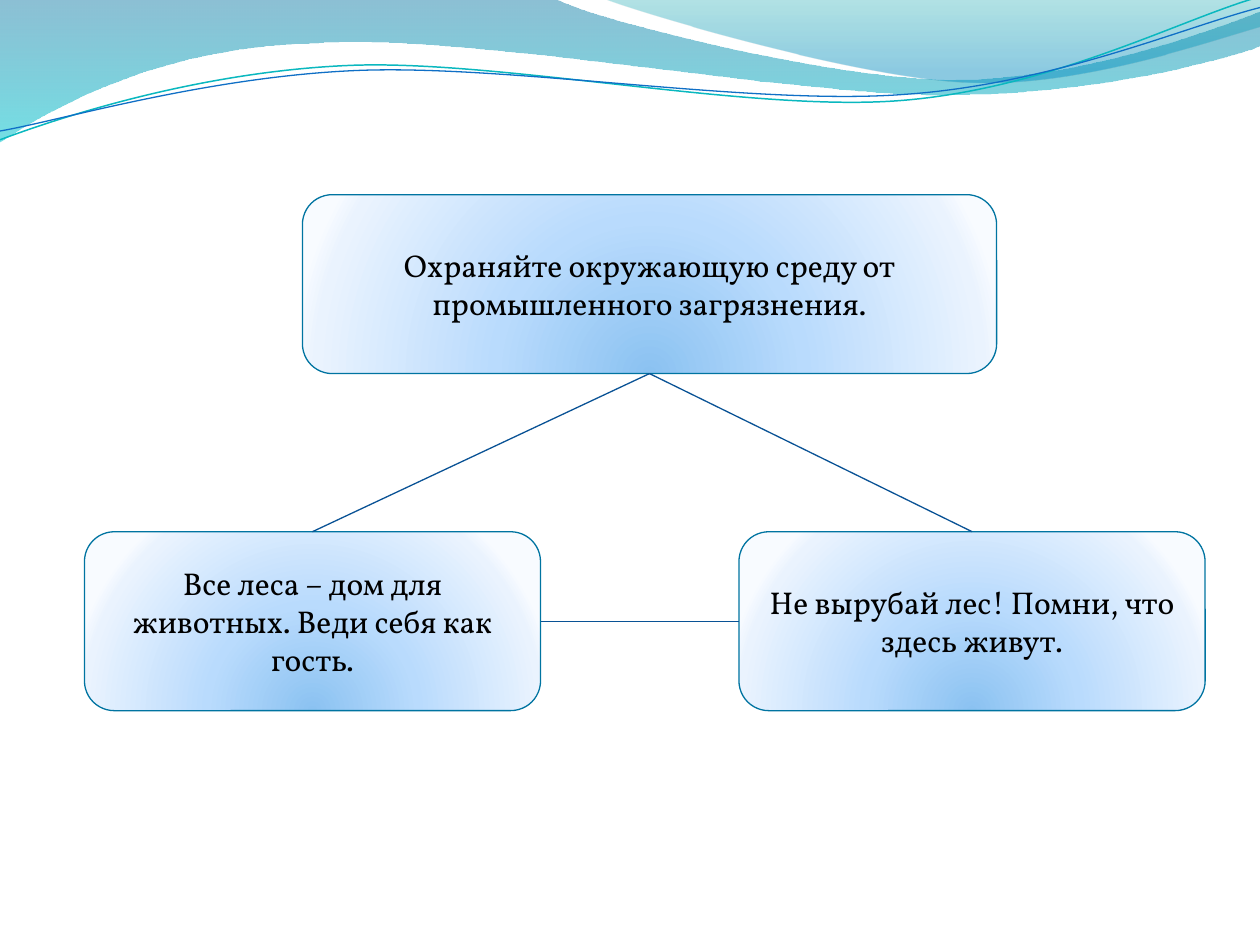
from pptx import Presentation as Deck
from pptx.dml.color import RGBColor as Rgb
from pptx.enum.shapes import MSO_CONNECTOR as Link, MSO_SHAPE as Kind
from pptx.enum.text import MSO_ANCHOR as Anchor, PP_ALIGN as Align
from pptx.oxml import parse_xml as parse
from pptx.oxml.ns import nsdecls as decl, qn
from pptx.util import Inches, Pt

# Gradient stops: position %, colour, opacity % where not solid
theme = {
    "sea": [(0, "0074A1", 45), (100, "00C6CF", 55)],
    "sky": [(0, "00A1A9", 30), (80, "008BBF", 45)],
    "box": [(0, "8BC2F1"), (43, "B9DBFD"), (93, "EAF3FE"), (100, "F8FBFF")],
    "edge": "0074A1", "link": "095295", "teal": "0AB8BF", "blue": "0F6FC6",
    "ink": "000000", "font": {"name": "Vollkorn", "size": Pt(18)},
}
down = '<a:lin ang="5400000" scaled="0"/>'
glow = ('<a:path path="circle">'
        '<a:fillToRect l="50000" t="130000" r="50000" b="-30000"/></a:path>')

deck = Deck()
deck.slide_width, deck.slide_height = Inches(10), Inches(7.5)
cell = deck.slide_width / 100  # grid of 100 columns by 75 rows
slide = deck.slides.add_slide(deck.slide_layouts[6])
shapes = slide.shapes


def shade(shape, stops, way):
    """Give a shape a gradient fill."""
    marks = ""
    for pos, tint, *clear in stops:
        alpha = "".join(f'<a:alpha val="{n * 1000}"/>' for n in clear)
        marks += (f'<a:gs pos="{pos * 1000}"><a:srgbClr val="{tint}">'
                  f'{alpha}</a:srgbClr></a:gs>')
    shape.fill.background()
    props = shape._element.spPr
    props.replace(props.find(qn("a:noFill")), parse(
        f'<a:gradFill {decl("a")} rotWithShape="1">'
        f'<a:gsLst>{marks}</a:gsLst>{way}</a:gradFill>'))


def trace(start, parts, close):
    """Draw lines (one point) and Bezier curves (three points) as one outline."""
    dots = [(part[i] * cell, part[i + 1] * cell)
            for part in parts for i in range(0, len(part), 2)]
    pen = shapes.build_freeform(start[0] * cell, start[1] * cell)
    pen.add_line_segments(dots, close=close)
    shape = pen.convert_to_shape()
    shape.shadow.inherit = False
    # Join the three points of each curve into one segment
    lines = iter(list(shape._element.iter(qn("a:lnTo"))))
    for part in parts:
        first = next(lines)
        if len(part) == 6:
            curve = parse(f'<a:cubicBezTo {decl("a")}/>')
            first.addprevious(curve)
            for line in (first, next(lines), next(lines)):
                curve.append(line[0])
                line.getparent().remove(line)
    return shape


# Filled waves along the top
waves = [
    ("sea", (-0.1, -0.1), [
        (44, -0.1), (47.6, 1.7, 66.4, 6.3, 75.8, 6.3),
        (85.3, 6.3, 95.8, 2.6, 100, 0.9), (100.1, 3.6),
        (98.3, 4.4, 87, 7.6, 74.6, 7.5), (62.2, 7.5, 38.2, 2.8, 25.7, 3.4),
        (12.9, 3.6, 4.6, 8.3, -0.1, 11.3)]),
    ("sky", (47.9, -0.1), [
        (50.9, 1.1, 68.2, 6.2, 76.9, 6.5), (85.6, 6.9, 96.1, 3.2, 100, 2.1),
        (100, -0.1)]),
]
for tone, start, parts in waves:
    wave = trace(start, parts, True)
    shade(wave, theme[tone], down)
    wave.line.fill.background()

# Thin wave lines
curls = [
    ("teal", 0.85, (0, 11.1), [
        (4.8, 9.3, 15.8, 5.7, 27.7, 5.2), (39.5, 4.7, 59.3, 8.9, 71.3, 8),
        (83.3, 7.1, 93.8, 1.5, 99.8, -0.2)]),
    ("blue", 0.75, (0, 10.4), [
        (4.7, 9.6, 16.4, 6.1, 28.3, 5.6), (40.3, 5.1, 59.7, 8.4, 71.7, 7.5),
        (83.6, 6.7, 94.1, 2.1, 100, 0.6)]),
]
for tone, width, start, parts in curls:
    curl = trace(start, parts, False)
    curl.fill.background()
    curl.line.color.rgb = Rgb.from_string(theme[tone])
    curl.line.width = Pt(width)

# Message boxes: column, row, width, text
tall = 14.2
notes = {
    "top": (24, 15.45, 55.1,
            "Охраняйте окружающую среду от промышленного загрязнения."),
    "right": (58.65, 42.2, 37, "Не вырубай лес! Помни, что здесь живут."),
    "left": (6.7, 42.2, 36.2,
             "Все леса – дом для животных. Веди себя как гость."),
}
boxes = {}
for key, (col, row, wide, text) in notes.items():
    box = shapes.add_shape(Kind.ROUNDED_RECTANGLE,
                           *(int(n * cell) for n in (col, row, wide, tall)))
    box.shadow.inherit = False
    shade(box, theme["box"], glow)
    box.line.color.rgb = Rgb.from_string(theme["edge"])
    box.line.width = Pt(0.75)
    frame = box.text_frame
    frame.word_wrap, frame.vertical_anchor = True, Anchor.MIDDLE
    para = frame.paragraphs[0]
    para.alignment = Align.CENTER
    run = para.add_run()
    run.text = text
    for name, value in theme["font"].items():
        setattr(run.font, name, value)
    run.font.color.rgb = Rgb.from_string(theme["ink"])
    boxes[key] = box

# Links between the boxes: sides are 0 top, 1 left, 2 bottom, 3 right
for head, out, tail, side in [("top", 2, "left", 0), ("top", 2, "right", 0),
                              ("right", 1, "left", 3)]:
    link = shapes.add_connector(Link.STRAIGHT, 0, 0, 0, 0)
    link.begin_connect(boxes[head], out)
    link.end_connect(boxes[tail], side)
    link.line.color.rgb = Rgb.from_string(theme["link"])
    link.line.width = Pt(0.75)
    link._element.spPr.append(parse(f'<a:effectLst {decl("a")}/>'))

deck.save("out.pptx")
